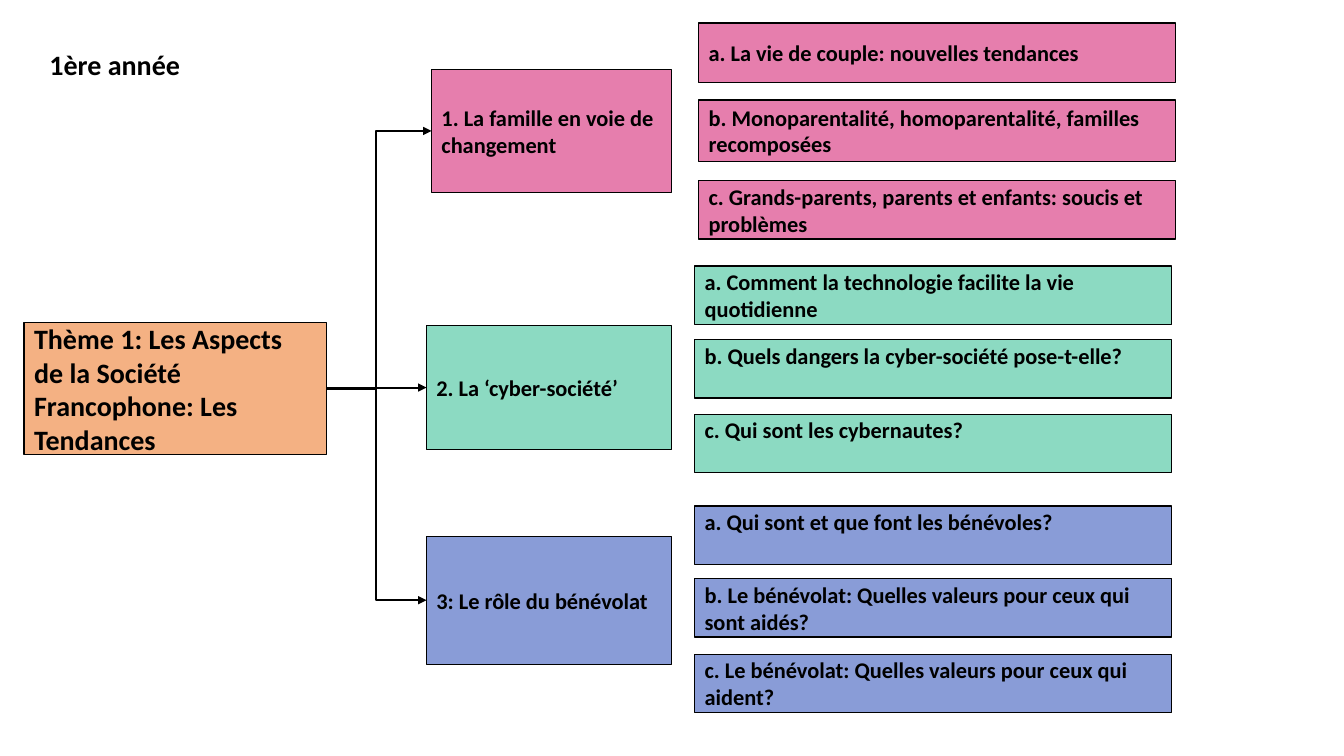
from dataclasses import dataclass

from lxml.etree import SubElement
from pptx import Presentation
from pptx.dml.color import RGBColor
from pptx.enum.shapes import MSO_CONNECTOR as Link, MSO_SHAPE as Preset
from pptx.enum.text import MSO_ANCHOR as Anchor, MSO_AUTO_SIZE as AutoSize, PP_ALIGN as Align
from pptx.oxml.ns import qn
from pptx.util import Pt

PX = 9144  # EMU per px, 100 px to the inch
COLOURS = {
    "ink": "000000",
    "theme": "F4B183",
    "family": "E67EAD",
    "cyber": "8CDAC2",
    "volunteers": "899CD7",
}
LEFT_SITE, RIGHT_SITE = 1, 3
TRUNK_X = 373
DETAIL_WIDTH = 473
TOP_INSET = 2


@dataclass(frozen=True)
class Rect:
    left: int
    top: int
    width: int
    height: int


@dataclass(frozen=True)
class Detail:
    text: str
    top: int
    height: int = 58
    anchor: Anchor = Anchor.MIDDLE


@dataclass(frozen=True)
class Branch:
    colour: str
    text: str
    rect: Rect
    detail_left: int
    details: tuple[Detail, ...]


THEME_RECT = Rect(24, 320, 300, 131)
BRANCHES = (
    Branch("family", "1. La famille en voie de changement", Rect(428, 69, 238, 122), 693, (
        Detail("a. La vie de couple: nouvelles tendances", 23, 59),
        Detail("b. Monoparentalité, homoparentalité, familles recomposées", 99, 61),
        Detail("c. Grands-parents, parents et enfants: soucis et problèmes", 179),
    )),
    Branch("cyber", "2. La ‘cyber-société’", Rect(423, 323, 243, 123), 689, (
        Detail("a. Comment la technologie facilite la vie quotidienne", 264),
        Detail("b. Quels dangers la cyber-société pose-t-elle?", 337, anchor=Anchor.TOP),
        Detail("c. Qui sont les cybernautes?", 411, anchor=Anchor.TOP),
    )),
    Branch("volunteers", "3: Le rôle du bénévolat", Rect(423, 532, 243, 127), 689, (
        Detail("a. Qui sont et que font les bénévoles?", 502, anchor=Anchor.TOP),
        Detail("b. Le bénévolat: Quelles valeurs pour ceux qui sont aidés?", 574),
        Detail("c. Le bénévolat: Quelles valeurs pour ceux qui aident?", 649),
    )),
)


def colour(name: str) -> RGBColor:
    return RGBColor.from_string(COLOURS[name])


def write(shape, text: str, *, size: int = 16, anchor: Anchor = Anchor.MIDDLE,
          wrap: bool = True) -> None:
    frame = shape.text_frame
    frame.word_wrap = wrap
    frame.auto_size = AutoSize.NONE
    frame.vertical_anchor = anchor
    if anchor == Anchor.TOP:
        frame.margin_top = TOP_INSET * PX
    para = frame.paragraphs[0]
    para.alignment = Align.LEFT
    span = para.add_run()
    span.text = text
    font = span.font
    font.name, font.size, font.bold = "Calibri", Pt(size), True
    font.color.rgb = colour("ink")


def add_box(page, rect: Rect, fill: str, text: str, *, size: int = 16,
            anchor: Anchor = Anchor.MIDDLE):
    box = page.shapes.add_shape(Preset.RECTANGLE, rect.left * PX, rect.top * PX,
                                rect.width * PX, rect.height * PX)
    box.shadow.inherit = False
    box.fill.solid()
    box.fill.fore_color.rgb = colour(fill)
    box.line.color.rgb = colour("ink")
    box.line.width = Pt(1)
    write(box, text, size=size, anchor=anchor)
    return box


def add_arrow(page, theme, target) -> None:
    """Join the theme to a branch: straight when level, else bent at the trunk."""
    start_x = theme.left + theme.width
    start_y = theme.top + theme.height // 2
    end_y = target.top + target.height // 2
    level = abs(end_y - start_y) < 2 * PX
    if level:
        arrow = page.shapes.add_connector(Link.STRAIGHT, start_x, end_y, target.left, end_y)
    else:
        arrow = page.shapes.add_connector(Link.ELBOW, start_x, start_y, target.left, end_y)
        arrow.begin_connect(theme, RIGHT_SITE)
        bend = (TRUNK_X * PX - start_x) / (target.left - start_x)
        guides = arrow._element.spPr.find(qn("a:prstGeom")).get_or_add_avLst()
        SubElement(guides, qn("a:gd"), name="adj1", fmla=f"val {round(bend * 100000)}")
    arrow.end_connect(target, LEFT_SITE)
    arrow.line.color.rgb = colour("ink")
    arrow.line.width = Pt(1.5)
    SubElement(arrow.line._get_or_add_ln(), qn("a:tailEnd"), type="triangle")
    SubElement(arrow._element.spPr, qn("a:effectLst"))


def add_title(page, rect: Rect, text: str) -> None:
    title = page.shapes.title
    title.left, title.top = rect.left * PX, rect.top * PX
    title.width, title.height = rect.width * PX, rect.height * PX
    write(title, text, size=20, wrap=False)


def main() -> None:
    deck = Presentation()
    deck.slide_width, deck.slide_height = 1333 * PX, 750 * PX
    page = deck.slides.add_slide(deck.slide_layouts.get_by_name("Title Only"))
    add_title(page, Rect(39, 42, 151, 44), "1ère année")
    theme = add_box(page, THEME_RECT, "theme",
                    "Thème 1: Les Aspects de la Société Francophone: Les Tendances", size=20)
    for branch in BRANCHES:
        target = add_box(page, branch.rect, branch.colour, branch.text)
        add_arrow(page, theme, target)
        for detail in branch.details:
            rect = Rect(branch.detail_left, detail.top, DETAIL_WIDTH, detail.height)
            add_box(page, rect, branch.colour, detail.text, anchor=detail.anchor)
    deck.save("out.pptx")


if __name__ == "__main__":
    main()
